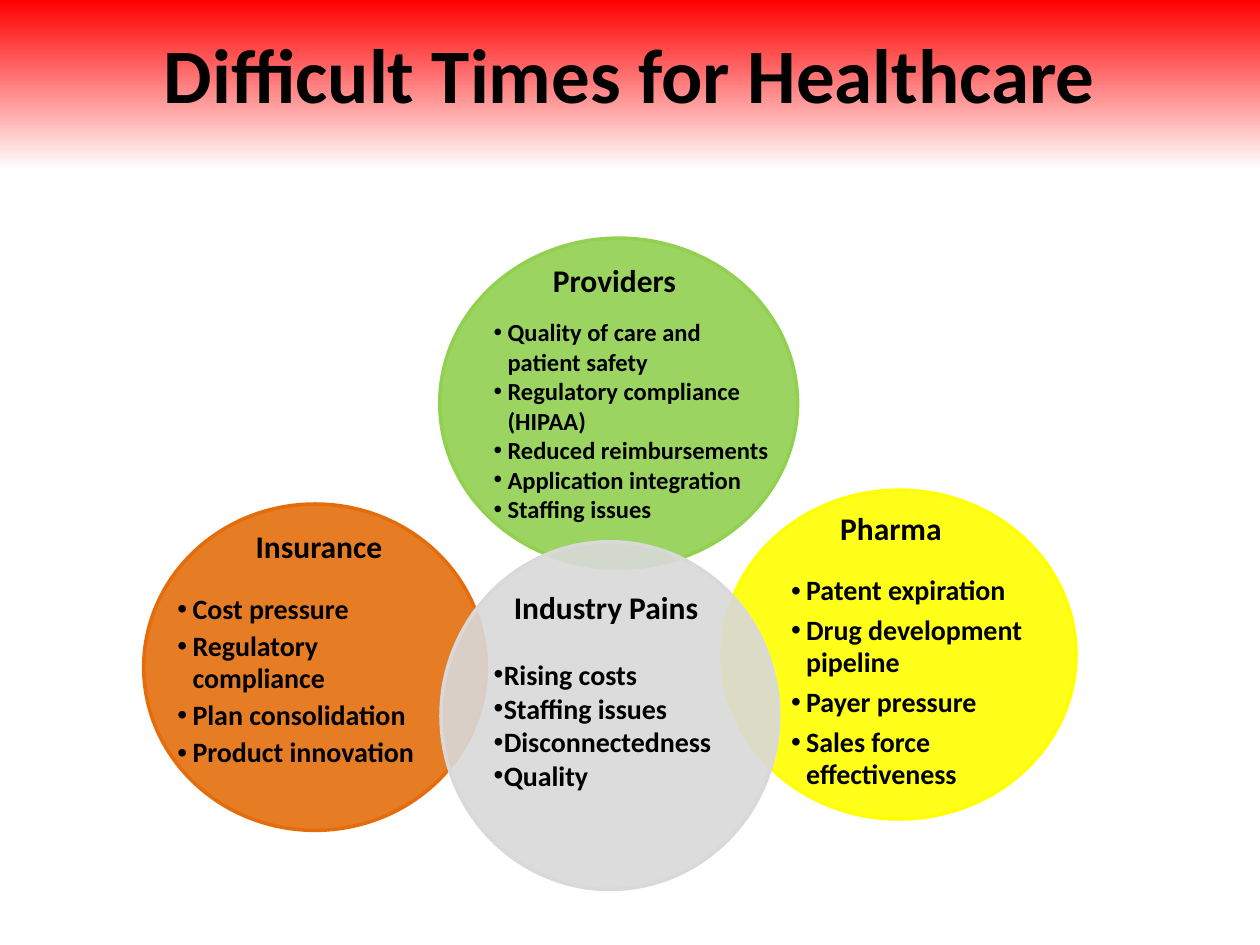
import pptx
import pptx.dml.color
import pptx.enum.shapes
import pptx.enum.text
import pptx.oxml.xmlchemy
import pptx.util
from lxml import etree
from pptx.oxml.ns import qn
from pptx.util import Inches

FONT = "Calibri"
ANCHOR = pptx.enum.text.MSO_ANCHOR


def rgb(code):
    return pptx.dml.color.RGBColor.from_string(code)


def box(bounds):
    return [Inches(length) for length in bounds]


def style_paragraph(paragraph, size):
    for run in paragraph.runs:
        run.font.name = FONT
        run.font.size = pptx.util.Pt(size)
        run.font.bold = True
        run.font.color.rgb = rgb("000000")


def paint_background(slide):
    fill = slide.background.fill
    fill.gradient()
    fill.gradient_angle = 270
    for stop, position, color in zip(fill.gradient_stops, (0, 0.18), ("FF0000", "FFFFFF")):
        stop.position = position
        stop.color.rgb = rgb(color)


def set_title(slide, text):
    title = slide.shapes.title
    title.left, title.top, title.width, title.height = box((0, 0.17, 10, 0.82))
    title.text_frame.text = text
    title.text_frame.vertical_anchor = ANCHOR.MIDDLE
    paragraph = title.text_frame.paragraphs[0]
    paragraph.alignment = pptx.enum.text.PP_ALIGN.CENTER
    style_paragraph(paragraph, 44)


def add_circle(shapes, bounds, color, opacity=90):
    circle = shapes.add_shape(pptx.enum.shapes.MSO_SHAPE.OVAL, *box(bounds))
    circle.shadow.inherit = False
    circle.fill.solid()
    circle.fill.fore_color.rgb = rgb(color)
    circle.line.color.rgb = rgb(color)
    circle.line.width = pptx.util.Pt(2)
    tint = circle.fill._xPr.find(qn("a:solidFill"))[0]
    etree.SubElement(tint, qn("a:alpha")).set("val", str(opacity * 1000))


def add_heading(slide, bounds, text):
    heading = slide.shapes.add_textbox(*box(bounds))
    heading.text_frame.word_wrap = True
    heading.text_frame.text = text
    style_paragraph(heading.text_frame.paragraphs[0], 18)


def add_bullets(slide, bounds, items, size, indent, gap=0, spacing=1.0, anchor=ANCHOR.TOP):
    frame = slide.shapes.add_textbox(*box(bounds)).text_frame
    frame.word_wrap = True
    frame.vertical_anchor = anchor
    for index, item in enumerate(items):
        paragraph = frame.add_paragraph() if index else frame.paragraphs[0]
        paragraph.text = item
        paragraph.line_spacing = spacing
        paragraph.space_before = pptx.util.Pt(gap if index else 0)
        style_paragraph(paragraph, size)
        properties = paragraph._p.get_or_add_pPr()
        properties.set("marL", str(Inches(indent)))
        properties.set("indent", str(-Inches(indent)))
        etree.SubElement(properties, qn("a:buFont")).set("typeface", "Arial")
        etree.SubElement(properties, qn("a:buChar")).set("char", "•")


def main():
    deck = pptx.Presentation()
    deck.slide_width, deck.slide_height = Inches(10), Inches(7.5)
    slide = deck.slides.add_slide(deck.slide_layouts[5])
    paint_background(slide)
    set_title(slide, "Difficult Times for Healthcare")

    sectors = slide.shapes.add_group_shape().shapes
    add_circle(sectors, (3.49, 1.89, 2.84, 2.62), "92D050")
    add_circle(sectors, (5.73, 3.89, 2.81, 2.61), "FFFF00")
    add_circle(sectors, (1.14, 4, 2.72, 2.59), "E46C0A", 89)

    add_heading(slide, (4.29, 2.02, 1.18, 0.71), "Providers")
    add_bullets(slide, (1.31, 4.69, 2.59, 1.44),
                ["Cost pressure", "Regulatory\vcompliance", "Plan consolidation",
                 "Product innovation"],
                16, 0.12, gap=3, spacing=0.95, anchor=ANCHOR.MIDDLE)
    add_heading(slide, (1.93, 4.13, 1.21, 0.4), "Insurance")
    add_bullets(slide, (6.18, 4.54, 2.09, 1.76),
                ["Patent expiration", "Drug development pipeline", "Payer pressure",
                 "Sales force effectiveness"],
                16, 0.12, gap=4.5, spacing=0.95, anchor=ANCHOR.MIDDLE)
    add_heading(slide, (6.57, 3.99, 1.34, 0.4), "Pharma")
    add_bullets(slide, (3.82, 2.47, 2.44, 1.75),
                ["Quality of care and\vpatient safety", "Regulatory compliance\v(HIPAA)",
                 "Reduced reimbursements", "Application integration", "Staffing issues"],
                14, 0.11)

    add_circle(slide.shapes, (3.5, 4.3, 2.68, 2.76), "D9D9D9")
    add_heading(slide, (3.98, 4.62, 1.73, 0.4), "Industry Pains")
    add_bullets(slide, (3.82, 5.17, 2.44, 1.18),
                ["Rising costs", "Staffing issues", "Disconnectedness", "Quality"],
                16, 0.08)

    deck.save("out.pptx")


if __name__ == "__main__":
    main()
